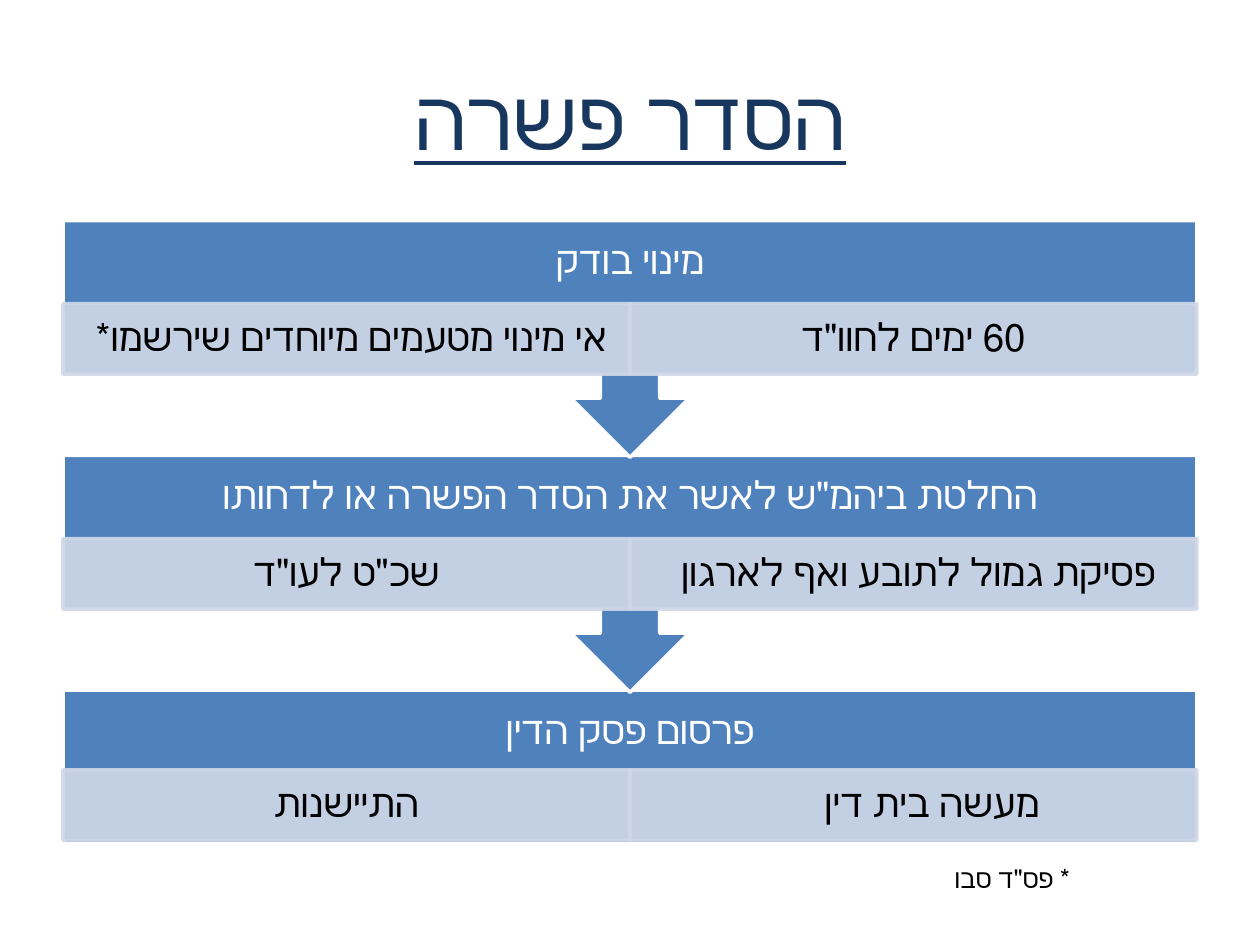
from lxml import etree
from pptx import Presentation
from pptx.dml.color import RGBColor
from pptx.enum.shapes import MSO_SHAPE
from pptx.enum.text import MSO_ANCHOR, PP_ALIGN
from pptx.oxml.ns import qn
from pptx.util import Inches, Pt

RECT = MSO_SHAPE.RECTANGLE
CALLOUT = MSO_SHAPE.UP_ARROW_CALLOUT
MIDDLE = MSO_ANCHOR.MIDDLE
CENTER = PP_ALIGN.CENTER
FONT = "Calibri"
BLUE, PALE, NAVY, WHITE, BLACK = "4F81BD", "D0D8E8", "17375E", "FFFFFF", "000000"
LEFT, WIDTH, TOP, STEP = 0.5, 9, 1.75, 1.865
HEAD_H, CELL_H, CALLOUT_H, LAST_H = 0.66, 0.56, 1.88, 1.22
STAGES = [
    ("מינוי בודק", ["אי מינוי מטעמים מיוחדים שירשמו* ", "60 ימים לחוו\"ד"]),
    ("החלטת ביהמ\"ש לאשר את הסדר הפשרה או לדחותו",
     ["שכ\"ט לעו\"ד", "פסיקת גמול לתובע ואף לארגון "]),
    ("פרסום פסק הדין", ["התיישנות", "מעשה בית דין\t"]),
]


def rgb(value):
    """Turn a hex string into a colour."""
    return RGBColor.from_string(value)


def write(sp, text, size, color=BLACK, underline=None, spacing=None, inset=(0.1, 0.05)):
    """Put one centred right-to-left paragraph in a shape."""
    tf = sp.text_frame
    tf.word_wrap = True
    tf.vertical_anchor = MIDDLE
    tf.margin_left = tf.margin_right = Inches(inset[0])
    tf.margin_top = tf.margin_bottom = Inches(inset[1])
    p = tf.paragraphs[0]
    p.alignment = CENTER
    p.line_spacing = spacing
    p._p.get_or_add_pPr().set("rtl", "1")
    r = p.add_run()
    r.text = text
    r.font.size = Pt(size)
    r.font.underline = underline
    r.font.color.rgb = rgb(color)
    r.font.name = FONT


def add_text(s, box, text, size, **fmt):
    """Add a text box with one line of text."""
    write(s.shapes.add_textbox(*map(Inches, box)), text, size, **fmt)


def add_block(s, kind, box, fill, line, alpha=None):
    """Add a filled and outlined preset shape, optionally see-through."""
    sp = s.shapes.add_shape(kind, *map(Inches, box))
    sp.shadow.inherit = False
    sp.fill.solid()
    sp.fill.fore_color.rgb = rgb(fill)
    sp.line.color.rgb = rgb(line)
    sp.line.width = Pt(2)
    if alpha:
        for clr in sp._element.spPr.iter(qn("a:srgbClr")):
            etree.SubElement(clr, qn("a:alpha"), val=str(alpha * 1000))
    return sp


def add_stage(s, row, heading, details):
    """Add one stage: a heading band over equal detail cells."""
    top = TOP + row * STEP
    last = row == len(STAGES) - 1
    kind, height = (RECT, LAST_H) if last else (CALLOUT, CALLOUT_H)
    band = add_block(s, kind, (LEFT, top, WIDTH, height), BLUE, WHITE)
    band.rotation = 0 if last else 180
    add_text(s, (LEFT, top, WIDTH, HEAD_H), heading, 22, color=WHITE,
             spacing=0.9, inset=(0.17, 0.17))
    cell_top = top + HEAD_H - (0.03 if last else 0)
    cell_w = WIDTH / len(details)
    for col, text in enumerate(details):
        box = (LEFT + col * cell_w, cell_top, cell_w, CELL_H)
        cell = add_block(s, RECT, box, PALE, PALE, alpha=90)
        write(cell, text, 22, spacing=0.9, inset=(0.17, 0.03))


def main():
    """Build the slide and save it."""
    prs = Presentation()
    prs.slide_width, prs.slide_height = Inches(10), Inches(7.5)
    s = prs.slides.add_slide(prs.slide_layouts[6])
    add_text(s, (LEFT, 0.3, WIDTH, 1.25), "הסדר פשרה", 48, color=NAVY, underline=True)
    for row, (heading, details) in reversed(list(enumerate(STAGES))):
        add_stage(s, row, heading, details)
    add_text(s, (7.13, 6.81, 1.81, 0.31), "* פס\"ד סבו", 15)
    prs.save("out.pptx")


if __name__ == "__main__":
    main()
